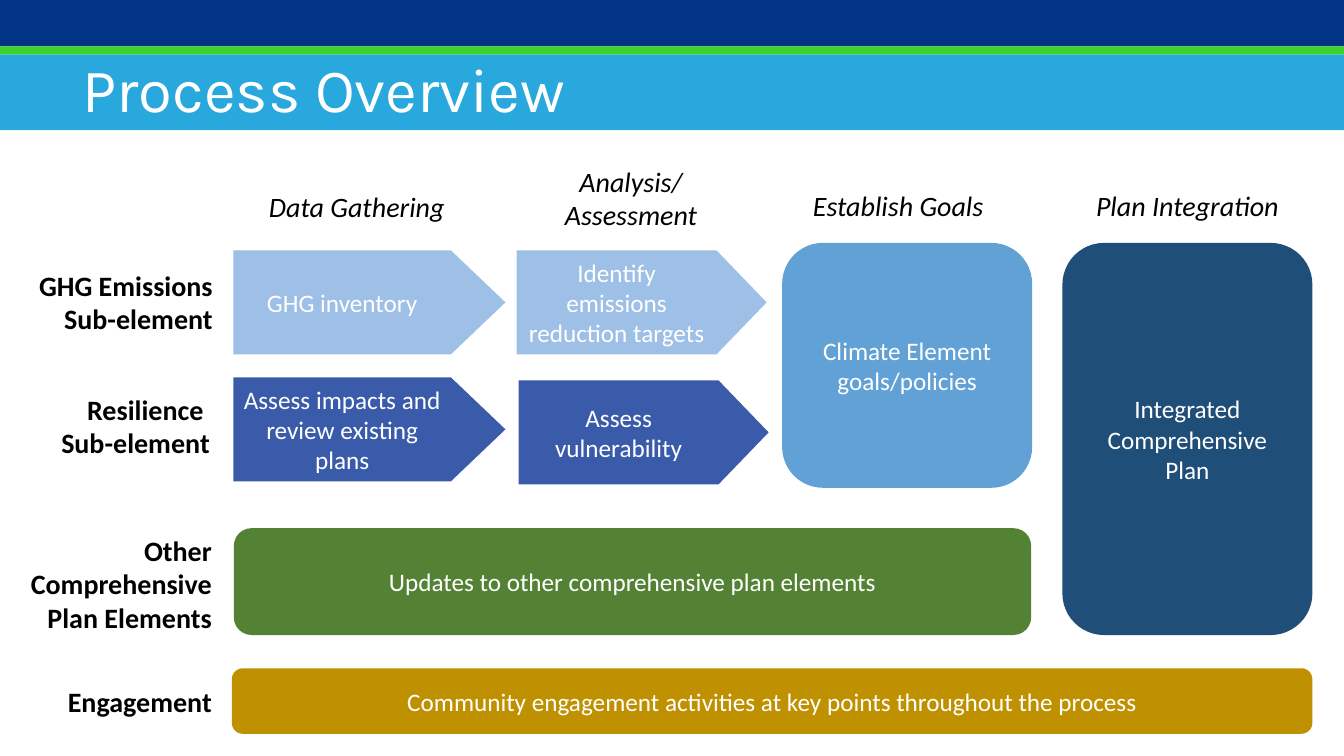
from pptx import Presentation
from pptx import util as u
from pptx.dml.color import RGBColor
from pptx.enum import shapes, text

WHITE, BLACK = "FFFFFF", "000000"
PALE_BLUE, ROYAL_BLUE = "9EBFE6", "3A5BAA"


def colour(code):
    return RGBColor.from_string(code)


class ProcessSlide:
    """Draws styled elements on one slide, placed in percent of its size."""

    shape_text = dict(name="Calibri", size=u.Pt(18))
    heading_text = dict(name="Calibri", size=u.Pt(20), italic=True)
    label_text = dict(name="Calibri", size=u.Pt(20), bold=True)
    title_text = dict(name="Karla", size=u.Pt(44))

    def __init__(self, deck):
        self.width, self.height = deck.slide_width, deck.slide_height
        self.page = deck.slides.add_slide(deck.slide_layouts[6])

    def place(self, left, top, width, height):
        across, down = self.width / 100, self.height / 100
        return [round(n) for n in (left * across, top * down, width * across, height * down)]

    def fill_text(self, box, words, style, ink, align, gap=0):
        box.text_frame.word_wrap = True
        para = box.text_frame.paragraphs[0]
        para.text = words
        para.alignment = align
        para.space_before = para.space_after = u.Pt(gap)
        for span in para.runs:
            for key, value in style.items():
                setattr(span.font, key, value)
            span.font.color.rgb = colour(ink)

    def shape(self, kind, bounds, fill, words=""):
        box = self.page.shapes.add_shape(kind, *bounds)
        box.shadow.inherit = False
        box.fill.solid()
        box.fill.fore_color.rgb = colour(fill)
        box.line.fill.background()
        box.text_frame.vertical_anchor = text.MSO_ANCHOR.MIDDLE
        self.fill_text(box, words, self.shape_text, WHITE, text.PP_ALIGN.CENTER)
        return box

    def band(self, top, height, fill):
        self.shape(shapes.MSO_SHAPE.RECTANGLE, self.place(0, top, 100, height), fill)

    def card(self, area, fill, words):
        kind = shapes.MSO_SHAPE.FLOWCHART_ALTERNATE_PROCESS
        self.shape(kind, self.place(*area), fill, words)

    def arrow(self, area, fill, words):
        left, top, width, height = self.place(*area)
        shift = (width - height) // 2
        bounds = left + shift, top - shift, height, width
        box = self.shape(shapes.MSO_SHAPE.FLOWCHART_OFFPAGE_CONNECTOR, bounds, fill, words)
        box.rotation = 270
        box.text_frame._txBody.bodyPr.set("vert", "vert")

    def caption(self, area, words, style, ink, align, gap=0):
        box = self.page.shapes.add_textbox(*self.place(*area))
        self.fill_text(box, words, style, ink, align, gap)
        box.text_frame.auto_size = text.MSO_AUTO_SIZE.SHAPE_TO_FIT_TEXT

    def heading(self, area, words):
        self.caption(area, words, self.heading_text, BLACK, text.PP_ALIGN.CENTER, 12)

    def label(self, area, words):
        self.caption(area, words, self.label_text, BLACK, text.PP_ALIGN.RIGHT, 12)

    def title(self, area, words):
        self.caption(area, words, self.title_text, WHITE, text.PP_ALIGN.LEFT)


def main():
    deck = Presentation()
    deck.slide_width, deck.slide_height = u.Inches(13.33), u.Inches(7.5)
    slide = ProcessSlide(deck)

    for top, height, fill in [(7.2, 10, "28A8DD"), (0, 6.13, "023586"), (6.13, 1.07, "3ED128")]:
        slide.band(top, height, fill)
    slide.title((5.4, 6.13, 90.3, 11.2), "Process Overview")

    for left, top, height, words in [
        (17.25, 24.4, 5.87, "Data Gathering"),
        (37.65, 21.07, 10.27, "Analysis/ Assessment"),
        (57.53, 24.27, 5.87, "Establish Goals"),
        (79.05, 24.27, 5.87, "Plan Integration"),
    ]:
        slide.heading((left, top, 18.6, height), words)

    for area, words in [
        ((-0.68, 34.8, 17.25, 10.27), "GHG Emissions Sub-element"),
        ((0.9, 51.2, 15.45, 10.27), "Resilience \nSub-element"),
        ((-0.75, 69.87, 17.25, 14.8), "Other Comprehensive Plan Elements"),
        ((0.9, 89.87, 15.6, 5.87), "Engagement"),
    ]:
        slide.label(area, words)

    for left, top, width, fill, words in [
        (17.36, 33.13, 20.25, PALE_BLUE, "GHG inventory"),
        (38.44, 33.13, 18.6, PALE_BLUE, "Identify emissions reduction targets"),
        (17.36, 49.93, 20.25, ROYAL_BLUE, "Assess impacts and review existing plans"),
        (38.59, 50.33, 18.6, ROYAL_BLUE, "Assess vulnerability"),
    ]:
        slide.arrow((left, top, width, 13.73), fill, words)

    for area, fill, words in [
        ((58.2, 32.13, 18.6, 32.4), "61A1D6", "Climate Element goals/policies"),
        ((79.05, 32.13, 18.6, 51.87), "1F4E79", "Integrated Comprehensive Plan"),
        ((17.4, 69.87, 59.33, 14.13), "548235", "Updates to other comprehensive plan elements"),
        ((17.25, 88.4, 80.4, 8.67), "BF9000",
         "Community engagement activities at key points throughout the process"),
    ]:
        slide.card(area, fill, words)

    deck.save("out.pptx")


if __name__ == "__main__":
    main()
